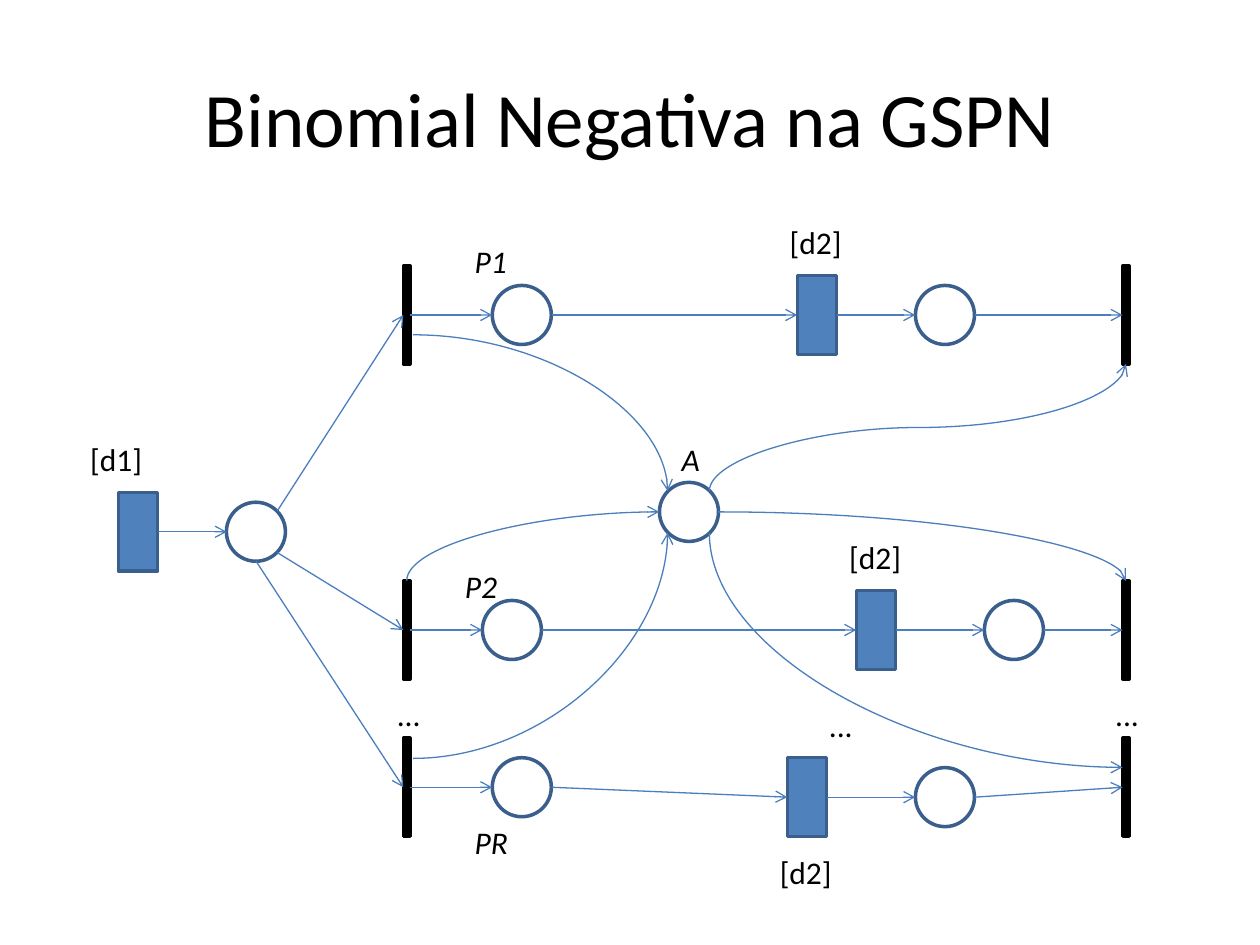
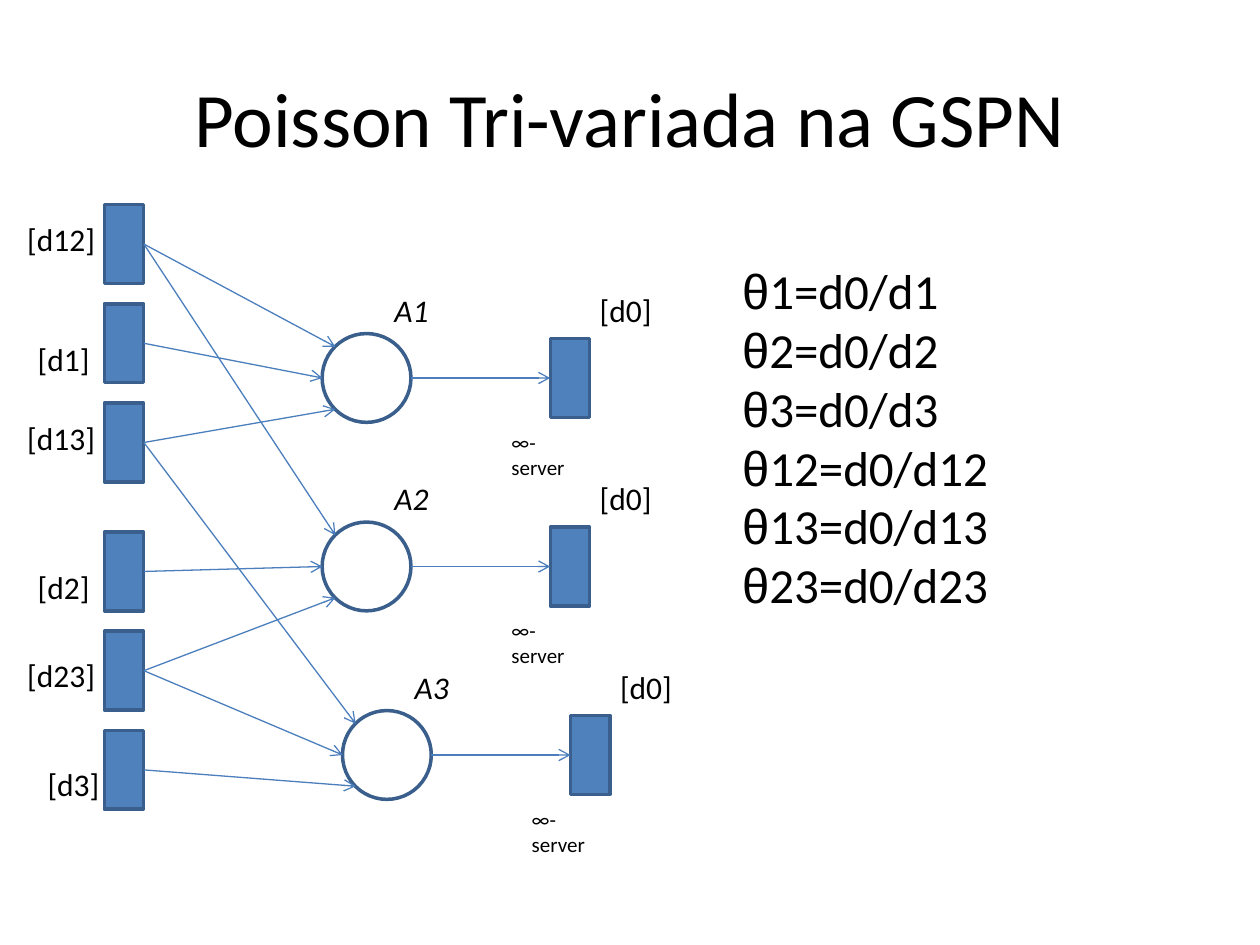
"""Two slides of stochastic Petri nets: negative binomial and trivariate Poisson."""
import math

import pptx
import pptx.dml.color
import pptx.enum.shapes
import pptx.enum.text
import pptx.oxml.ns
import pptx.util
from lxml import etree

Cm, Pt = pptx.util.Cm, pptx.util.Pt
RGBColor = pptx.dml.color.RGBColor
SHAPE = pptx.enum.shapes.MSO_SHAPE
CONNECTOR = pptx.enum.shapes.MSO_CONNECTOR
qn = pptx.oxml.ns.qn

BLACK = RGBColor(0, 0, 0)
WHITE = RGBColor(255, 255, 255)
BLUE = RGBColor(0x4F, 0x81, 0xBD)
OUTLINE = RGBColor(0x3A, 0x5F, 0x8C)
ARC = RGBColor(0x4B, 0x7E, 0xBC)
FONT = "Calibri"

PLACE = (SHAPE.OVAL, 1.19, 1.19, WHITE, OUTLINE)
BIG_PLACE = (SHAPE.OVAL, 1.79, 1.79, WHITE, OUTLINE)
TIMED = (SHAPE.RECTANGLE, 0.79, 1.59, BLUE, OUTLINE)
IMMEDIATE = (SHAPE.RECTANGLE, 0.13, 1.98, BLACK, BLACK)
LABEL_WIDTHS = {1: 0.95, 2: 1.35, 3: 1.05, 4: 1.65, 5: 1.95, 8: 2.03}


def add_text(s, x, y, w, h, text, size, wrap=False):
    tf = s.shapes.add_textbox(Cm(x), Cm(y), Cm(w), Cm(h)).text_frame
    tf.word_wrap = wrap
    tf.text = text
    for p in tf.paragraphs:
        p.font.size = Pt(size)
        p.font.name = FONT
        p.font.color.rgb = BLACK
    return tf


def add_arc(s, x1, y1, x2, y2, preset="line", rotation=0):
    if rotation:
        turn = math.sin(math.radians(rotation))
        cx, cy = (x1 + x2) / 2, (y1 + y2) / 2
        dx, dy = turn * (y1 - y2) / 2, turn * (x2 - x1) / 2
        x1, y1, x2, y2 = cx + dx, cy + dy, cx - dx, cy - dy
    kind = CONNECTOR.STRAIGHT if preset == "line" else CONNECTOR.CURVE
    sp = s.shapes.add_connector(kind, Cm(x1), Cm(y1), Cm(x2), Cm(y2))
    sp.line.color.rgb = ARC
    sp.line.width = Pt(0.75)
    pr = sp._element.spPr
    pr.find(qn("a:prstGeom")).set("prst", preset)
    if rotation:
        pr.find(qn("a:xfrm")).set("rot", str(rotation * 60000))
    etree.SubElement(pr.find(qn("a:ln")), qn("a:tailEnd"), type="arrow")
    etree.SubElement(pr, qn("a:effectLst"))


bin_nodes = [(TIMED, 2.78, 10.72), (PLACE, 5.16, 10.72), (PLACE, 13.89, 10.32)]
bin_arcs = [
    (3.18, 10.72, 4.57, 10.72),
    (5.59, 10.3, 8.13, 6.35),
    (5.59, 11.14, 8.13, 12.7),
    (5.16, 11.31, 8.13, 15.87),
    (8.33, 15.29, 13.46, 10.74, "curvedConnector2"),
    (8.33, 6.75, 13.46, 9.9, "curvedConnector2"),
    (8.2, 11.71, 13.29, 10.32, "curvedConnector2", 90),
    (14.3, 9.9, 22.7, 7.34, "curvedConnector3", 90),
    (14.48, 10.32, 22.7, 11.71, "curvedConnector2"),
    (14.3, 10.74, 22.63, 15.47, "curvedConnector2", 270),
]
bin_labels = [
    ("A", 13.49, 8.74), ("[d1]", 1.57, 8.74),
    ("P1", 9.32, 4.75), ("P2", 9.12, 11.3), ("PR", 9.32, 16.46),
    ("[d2]", 15.67, 4.37), ("[d2]", 16.87, 10.72), ("[d2]", 15.47, 17.07),
    ("...", 7.75, 13.89), ("...", 16.46, 14.1), ("...", 22.23, 13.89),
]
for y, first, timed, last, y_end in [
    (6.35, 10.52, 16.47, 19.05, 6.35),
    (12.7, 10.32, 17.66, 20.44, 12.7),
    (15.87, 10.52, 16.27, 19.05, 16.07),
]:
    bin_nodes += [
        (IMMEDIATE, 8.2, y), (PLACE, first, y), (TIMED, timed, y_end),
        (PLACE, last, y_end), (IMMEDIATE, 22.7, y),
    ]
    bin_arcs += [
        (8.26, y, first - 0.6, y),
        (first + 0.6, y, timed - 0.4, y_end),
        (timed + 0.4, y_end, last - 0.6, y_end),
        (last + 0.6, y_end, 22.63, y),
    ]

source_ys = [4.92, 6.92, 8.92, 11.52, 13.52, 15.52]
counters = [(7.39, 7.62), (7.39, 11.42), (7.8, 15.22)]
poi_nodes = [(TIMED, 2.5, y) for y in source_ys]
poi_arcs = []
poi_labels = [
    ("[d12]", 0.3, 4.32), ("[d1]", 0.51, 6.73), ("[d13]", 0.3, 8.33),
    ("[d2]", 0.51, 11.33), ("[d23]", 0.3, 13.11), ("[d3]", 0.71, 15.29),
]
for i, (x, y) in enumerate(counters, 1):
    poi_nodes += [(BIG_PLACE, x, y), (TIMED, x + 4.1, y)]
    poi_arcs.append((x + 0.89, y, x + 3.7, y))
    poi_labels += [
        (f"A{i}", x + 0.31, y - 1.88),
        ("[d0]", x + 4.45, y - 1.88),
        ("∞-server", x + 2.67, y + 0.91),
    ]
for source, counter, port in [
    (0, 0, -1), (1, 0, 0), (2, 0, 1),
    (0, 1, -1), (3, 1, 0), (4, 1, 1),
    (2, 2, -1), (4, 2, 0), (5, 2, 1),
]:
    x, y = counters[counter]
    reach = 0.63 if port else 0.89
    poi_arcs.append((2.9, source_ys[source], x - reach, y + 0.63 * port))

prs = pptx.Presentation()
prs.slide_width, prs.slide_height = Cm(25.4), Cm(19.05)

for title, nodes, arcs, labels in [
    ("Binomial Negativa na GSPN", bin_nodes, bin_arcs, bin_labels),
    ("Poisson Tri-variada na GSPN", poi_nodes, poi_arcs, poi_labels),
]:
    s = prs.slides.add_slide(prs.slide_layouts[6])
    tf = add_text(s, 1.27, 0.76, 22.86, 3.18, title, 44, True)
    tf.vertical_anchor = pptx.enum.text.MSO_ANCHOR.MIDDLE
    tf.paragraphs[0].alignment = pptx.enum.text.PP_ALIGN.CENTER
    for (kind, w, h, fill, line), x, y in nodes:
        sp = s.shapes.add_shape(kind, Cm(x - w / 2), Cm(y - h / 2), Cm(w), Cm(h))
        sp.shadow.inherit = False
        sp.fill.solid()
        sp.fill.fore_color.rgb = fill
        sp.line.color.rgb = line
        sp.line.width = Pt(2)
    for arc in arcs:
        add_arc(s, *arc)
    for text, x, y in labels:
        small = text == "∞-server"
        tf = add_text(s, x, y, LABEL_WIDTHS[len(text)], 0.77 if small else 1.02,
                      text, 12 if small else 18, small)
        tf.paragraphs[0].font.italic = text[0] in "AP"

rates = ["1", "2", "3", "12", "13", "23"]
tf = add_text(s, 14.71, 5.13, 5.51, 8.2, "\n".join("θ" for n in rates), 28)
for p, n in zip(tf.paragraphs, rates):
    p.runs[0].font.name = "Arial"
    r = p.add_run()
    r.text = f"{n}=d0/d{n}"

prs.save("out.pptx")
